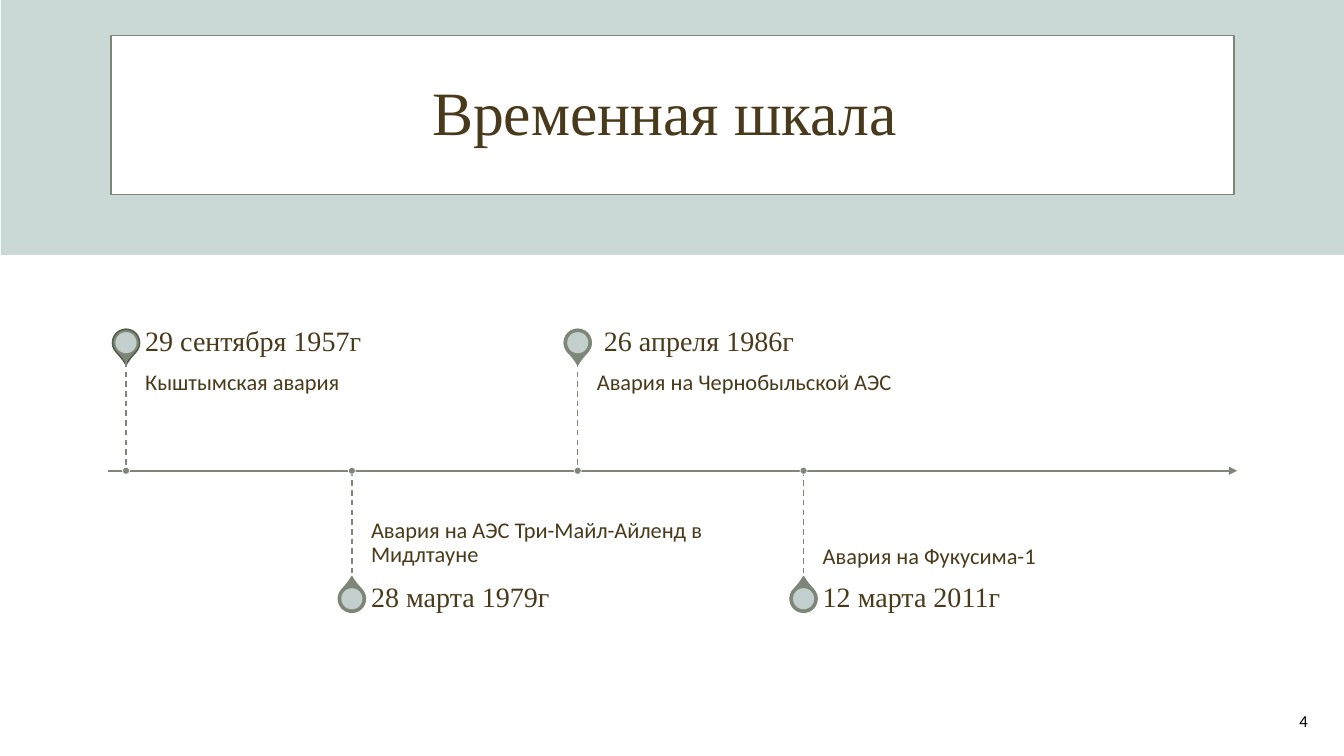
from dataclasses import dataclass

from lxml import etree
from pptx import Presentation
from pptx.dml.color import RGBColor
from pptx.enum.dml import MSO_LINE
from pptx.enum.shapes import MSO_CONNECTOR, MSO_SHAPE
from pptx.enum.text import MSO_ANCHOR, PP_ALIGN
from pptx.oxml.ns import qn
from pptx.util import Inches, Pt

RECT, OVAL, TEAR = MSO_SHAPE.RECTANGLE, MSO_SHAPE.OVAL, MSO_SHAPE.TEAR
LINE, DASH = MSO_CONNECTOR.STRAIGHT, MSO_LINE.DASH
TOP, MID, LOW = MSO_ANCHOR.TOP, MSO_ANCHOR.MIDDLE, MSO_ANCHOR.BOTTOM
LEFT, MIDST, RIGHT = PP_ALIGN.LEFT, PP_ALIGN.CENTER, PP_ALIGN.RIGHT

COLORS = {
    "mist": "CAD8D6",
    "sage": "7E8679",
    "moss": "4F5945",
    "brown": "4A3A1C",
    "white": "FFFFFF",
    "black": "000000",
}
SERIF, SANS = "Times New Roman", "Calibri"
AXIS_Y = 4.67
FIRST_X, STEP = 1.25, 2.24
STEM = 1.07
DATE_H = 0.38


@dataclass
class Event:
    date: str
    note: str
    above: bool
    edge: str = "sage"


@dataclass
class Style:
    font: str
    size: int
    color: str = "brown"
    align: PP_ALIGN = LEFT
    anchor: MSO_ANCHOR = MID
    pad: tuple = (0, 0, 0.14, 0)
    space: float = 0.9


EVENTS = [
    Event("29 сентября 1957г", "Кыштымская авария", True, "moss"),
    Event("28 марта 1979г", "Авария на АЭС Три-Майл-Айленд в Мидлтауне", False),
    Event(" 26 апреля 1986г", "Авария на Чернобыльской АЭС", True),
    Event("12 марта 2011г", "Авария на Фукусима-1", False),
]

EDGE_PAD = (0.1, 0.05, 0.1, 0.05)
TITLE = Style(SERIF, 44, align=MIDST, pad=EDGE_PAD)
NUMBER = Style(SANS, 12, "black", RIGHT, pad=EDGE_PAD, space=1.0)
DATE = Style(SERIF, 20)
NOTE_UP = Style(SANS, 16, anchor=TOP, pad=(0, 0.11, 0.11, 0.17))
NOTE_LOW = Style(SANS, 16, anchor=LOW, pad=(0, 0.17, 0, 0.11))


def tint(name: str) -> RGBColor:
    return RGBColor.from_string(COLORS[name])


def apply(target, values: dict) -> None:
    for key, value in values.items():
        setattr(target, key, value)


def add_form(slide, kind, box: tuple, fill: str, edge: str = "", width: float = 1):
    form = slide.shapes.add_shape(kind, *map(Inches, box))
    form.shadow.inherit = False
    form.fill.solid()
    form.fill.fore_color.rgb = tint(fill)
    if edge:
        form.line.color.rgb = tint(edge)
        form.line.width = Pt(width)
    else:
        form.line.fill.background()
    return form


def add_disc(slide, x: float, y: float, size: float, kind, *look):
    return add_form(slide, kind, (x - size / 2, y - size / 2, size, size), *look)


def add_text(slide, text: str, box: tuple, style: Style) -> None:
    frame = slide.shapes.add_textbox(*map(Inches, box)).text_frame
    sides = ("margin_left", "margin_top", "margin_right", "margin_bottom")
    apply(frame, dict(zip(sides, map(Inches, style.pad))))
    apply(frame, {"word_wrap": True, "vertical_anchor": style.anchor})
    para = frame.paragraphs[0]
    apply(para, {"text": text, "alignment": style.align, "line_spacing": style.space})
    apply(para.font, {"name": style.font, "size": Pt(style.size)})
    para.font.color.rgb = tint(style.color)


def add_line(slide, ends: tuple, width: float):
    line = slide.shapes.add_connector(LINE, *map(Inches, ends))
    etree.SubElement(line._element.spPr, qn("a:effectLst"))
    line.line.color.rgb = tint("sage")
    line.line.width = Pt(width)
    return line


def add_event(slide, event: Event, x: float) -> None:
    side = -1 if event.above else 1
    tip = AXIS_Y + side * (STEM + 0.01)
    pin = tip + side * DATE_H / 2

    # Pin
    drop = add_disc(slide, x, pin, 0.27, TEAR, "sage", event.edge)
    drop.adjustments[0] = 1.15
    drop.rotation = 135 if event.above else 315
    core = add_disc(slide, x, pin, 0.21, OVAL, "mist")
    shade = core.fill._xPr.find(qn("a:solidFill"))[0]
    etree.SubElement(shade, qn("a:alpha"), val="90000")

    # Labels
    left, wide = x + 0.19, 3.72
    note_y = tip if event.above else AXIS_Y
    note_style = NOTE_UP if event.above else NOTE_LOW
    add_text(slide, event.note, (left, note_y, wide, STEM), note_style)
    add_text(slide, event.date, (left, pin - DATE_H / 2, wide, DATE_H), DATE)

    # Stem and dot
    stem = add_line(slide, (x, min(tip, AXIS_Y), x, max(tip, AXIS_Y)), 1)
    stem.line.dash_style = DASH
    add_disc(slide, x, AXIS_Y, 0.07, OVAL, "sage", "white", 0.5)


def main() -> None:
    deck = Presentation()
    deck.slide_width, deck.slide_height = Inches(13.33), Inches(7.5)
    slide = deck.slides.add_slide(deck.slide_layouts[6])

    # Header
    add_form(slide, RECT, (0.01, 0, 13.32, 2.53), "mist")
    add_form(slide, RECT, (1.1, 0.35, 11.14, 1.58), "white", "sage")
    add_text(slide, "Временная шкала ", (0.42, 0.42, 12.5, 1.45), TITLE)
    add_text(slide, "4", (10.07, 6.95, 3, 0.4), NUMBER)

    # Timeline
    axis = add_line(slide, (1.07, AXIS_Y, 12.27, AXIS_Y), 1.5)
    etree.SubElement(axis.line._get_or_add_ln(), qn("a:tailEnd"), type="triangle")
    for i, event in enumerate(EVENTS):
        add_event(slide, event, FIRST_X + i * STEP)

    deck.save("out.pptx")


if __name__ == "__main__":
    main()
